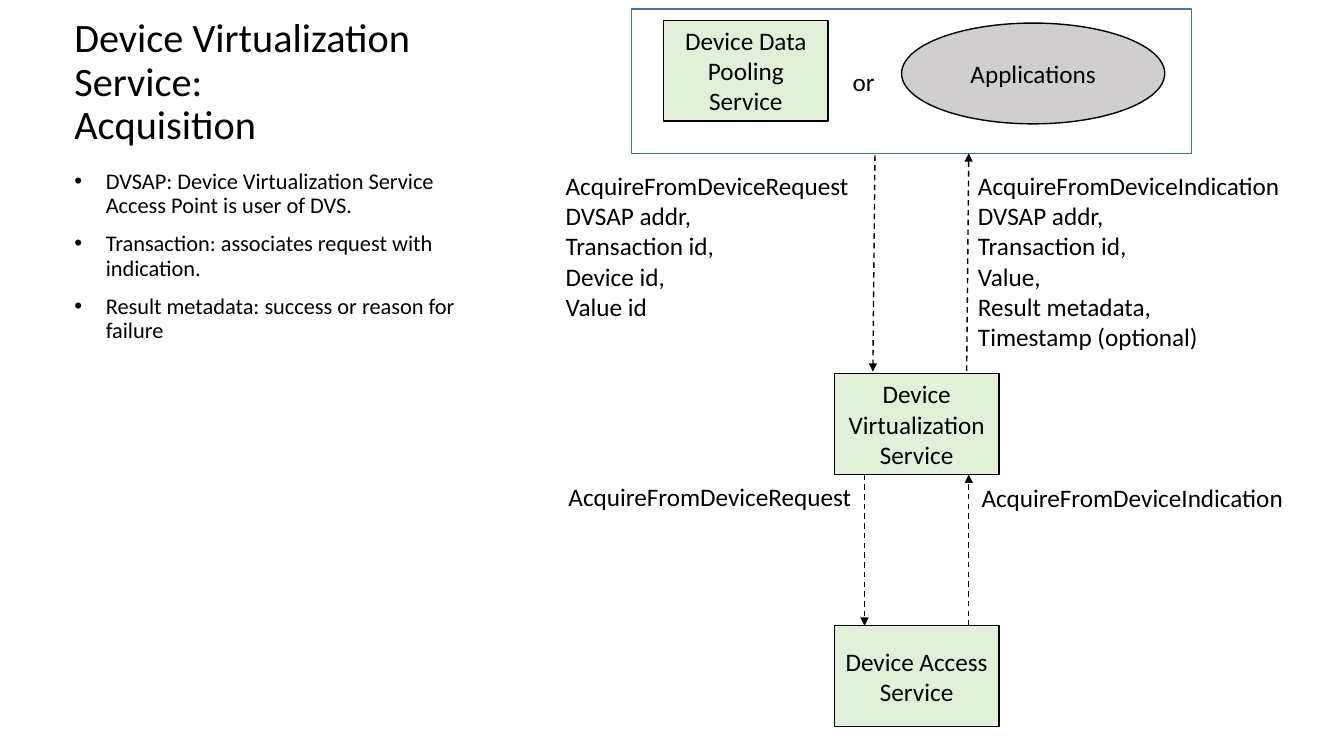
from pptx import Presentation
from pptx.dml.color import RGBColor
from pptx.enum.dml import MSO_LINE
from pptx.enum.shapes import MSO_CONNECTOR as Conn, MSO_SHAPE as Kind
from pptx.enum.text import MSO_ANCHOR as Anchor, PP_ALIGN as Align
from pptx.oxml.ns import qn
from pptx.util import Pt
from lxml.etree import SubElement as Sub

BLACK, GREEN, GREY, BLUE = "000000", "E2F0D9", "D0CECE", "43739E"
BOX_W, BOX_H = 117.5, 72


def color(text):
    return RGBColor.from_string(text)


def write(frame, text, size=18, align=Align.LEFT, anchor=Anchor.TOP,
          wrap=True, space=None, before=0, bullet=False):
    """Each line of text is a paragraph; a vertical tab breaks a line."""
    frame.word_wrap = wrap
    frame.vertical_anchor = anchor
    for i, line in enumerate(text.split("\n")):
        para = frame.add_paragraph() if i else frame.paragraphs[0]
        para.text = line
        para.alignment = align
        para.space_before = Pt(before)
        if space:
            para.line_spacing = space
        for run in para.runs:
            run.font.size, run.font.name = Pt(size), "Calibri"
            run.font.color.rgb = color(BLACK)
        if bullet:
            props = para._p.get_or_add_pPr()
            props.set("marL", str(Pt(22.5)))
            props.set("indent", str(Pt(-22.5)))
            Sub(props, qn("a:buFont"), typeface="Arial")
            Sub(props, qn("a:buChar"), char="•")


def label(slide, x, y, w, h, text, **style):
    box = slide.shapes.add_textbox(Pt(x), Pt(y), Pt(w), Pt(h))
    write(box.text_frame, text, **style)


def node(slide, x, y, w, h, text="", kind=Kind.RECTANGLE, fill=GREEN, line=BLACK):
    shape = slide.shapes.add_shape(kind, Pt(x), Pt(y), Pt(w), Pt(h))
    shape.shadow.inherit = False
    if fill:
        shape.fill.solid()
        shape.fill.fore_color.rgb = color(fill)
    else:
        shape.fill.background()
    shape.line.color.rgb = color(line)
    shape.line.width = Pt(1)
    if text:
        write(shape.text_frame, text, align=Align.CENTER, anchor=Anchor.MIDDLE)


def arrow(slide, x1, y1, x2, y2):
    link = slide.shapes.add_connector(Conn.STRAIGHT, Pt(x1), Pt(y1), Pt(x2), Pt(y2))
    link.line.color.rgb = color(BLACK)
    link.line.width = Pt(1)
    link.line.dash_style = MSO_LINE.DASH
    Sub(link.line._get_or_add_ln(), qn("a:tailEnd"), type="triangle")
    Sub(link._element.spPr, qn("a:effectLst"))


def intro(slide, x, y, w, h):
    """Title above the bullet list."""
    label(slide, x, y, w, 94.5, "Device Virtualization Service:\vAcquisition",
          size=28.8, anchor=Anchor.BOTTOM, space=0.9)
    label(slide, x, y + 103, w, h - 103,
          "DVSAP: Device Virtualization Service Access Point is user of DVS.\n"
          "Transaction: associates request with indication.\n"
          "Result metadata: success or reason for failure",
          size=16, space=0.9, before=10, bullet=True)


def users(slide, x, y, w, h):
    """Frame with the two kinds of service user."""
    node(slide, x + 193, y + 10, 188, BOX_H, "Applications", kind=Kind.OVAL, fill=GREY)
    node(slide, x + 23, y + 8, BOX_W, BOX_H, "Device Data Pooling Service")
    node(slide, x, y, w, h, fill=None, line=BLUE)
    label(slide, x + 151, y + 37.5, 30.5, 29, "or", wrap=False)


def stack(slide, x, y, w, h):
    """Services below the users, with the messages between them."""
    mid, low = y + 157.5, y + h - BOX_H
    left = x + 199
    node(slide, left, mid, BOX_W, BOX_H, "Device Virtualization Service")
    node(slide, left, low, BOX_W, BOX_H, "Device Access Service")

    # Requests go down, indications go up
    foot = mid + BOX_H
    arrow(slide, left + 29, y + 1.5, left + 27.5, mid - 1.5)
    arrow(slide, left + 94.5, mid - 2, left + 96, y)
    arrow(slide, left + 21.5, foot, left + 21.5, low)
    arrow(slide, left + 96, low, left + 96, foot)

    # Message names and fields
    ask, tell = "AcquireFromDeviceRequest", "AcquireFromDeviceIndication"
    shared = "\nDVSAP addr,\nTransaction id,\n"
    for dx, top, wide, high, text in (
            (0, y + 8.5, 219, 116.5, ask + shared + "Device id,\nValue id"),
            (294.5, y + 8.5, 232.5, 138, tell + shared
             + "Value,\nResult metadata,\nTimestamp (optional)"),
            (2, foot + 1.5, 219, 29, ask),
            (297, foot + 2, 231, 29, tell)):
        label(slide, x + dx, top, wide, high, text, wrap=False)


def main():
    deck = Presentation()
    deck.slide_width, deck.slide_height = Pt(960), Pt(540)
    slide = deck.slides.add_slide(deck.slide_layouts[6])
    intro(slide, 46, 15, 310, 475)
    users(slide, 451, 6.5, 400, 103)
    stack(slide, 397, 109.5, 528, 409.5)
    deck.save("out.pptx")


if __name__ == "__main__":
    main()
